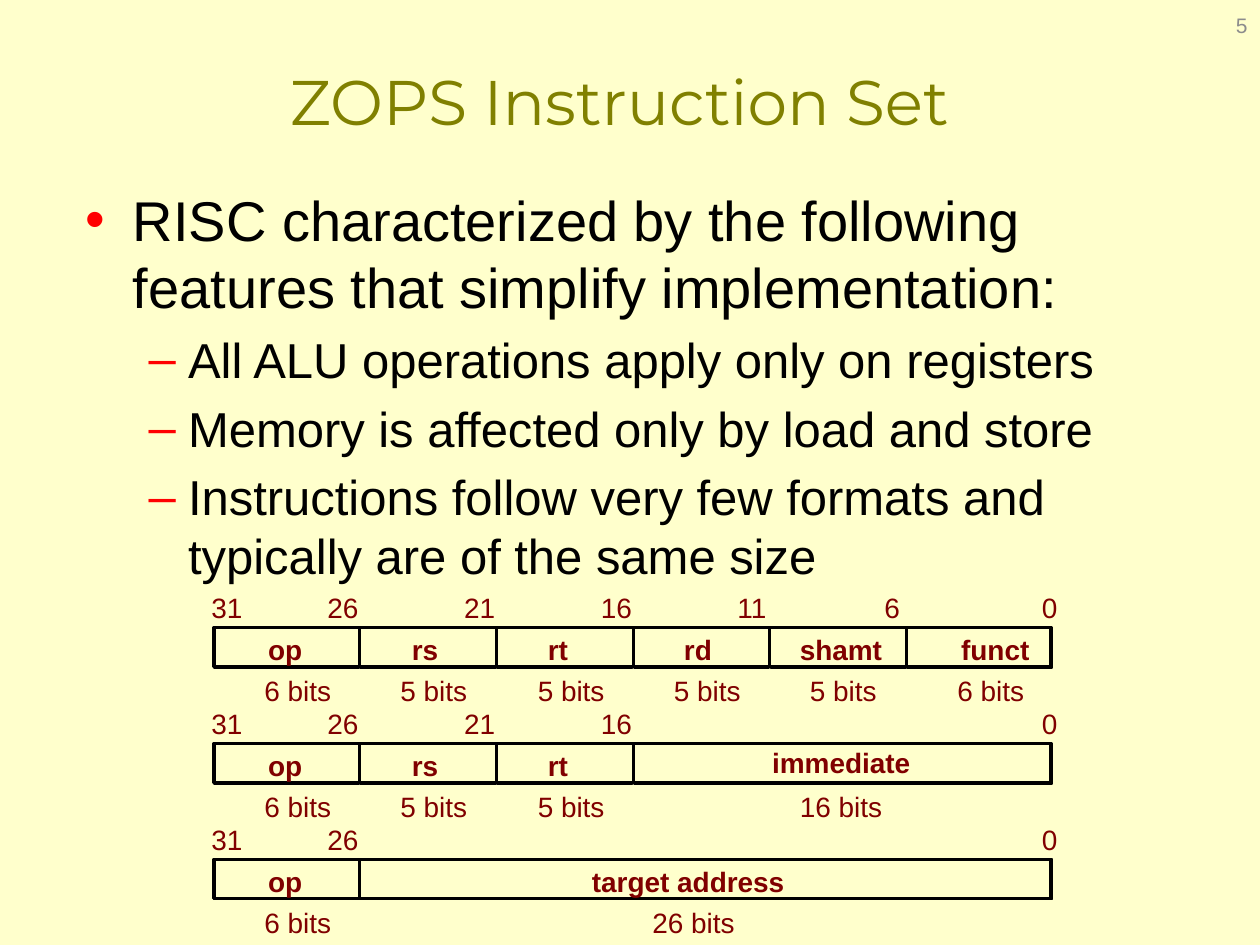
from typing import NamedTuple

from lxml.etree import SubElement
from pptx import Presentation
from pptx.dml.color import RGBColor
from pptx.enum.shapes import MSO_SHAPE
from pptx.enum.text import MSO_ANCHOR, MSO_AUTO_SIZE, PP_ALIGN
from pptx.oxml.ns import qn
from pptx.shapes.group import GroupShape
from pptx.slide import Slide
from pptx.text.text import TextFrame
from pptx.util import Inches, Pt

CREAM = RGBColor(0xFF, 0xFF, 0xCC)
OLIVE = RGBColor(0x80, 0x80, 0x00)
MAROON = RGBColor(0x80, 0x00, 0x00)
BLACK = RGBColor(0x00, 0x00, 0x00)
RED = RGBColor(0xFF, 0x00, 0x00)
GREY = RGBColor(0x8C, 0x8C, 0x8C)

STEP = 1.085
LEFT = 1.7
RIGHT = 8.35
HEIGHT = 0.32
GAP = 0.01


class Edge(NamedTuple):
    x: float
    mark: float


class Field(NamedTuple):
    name: str
    size: str
    high: int
    low: int
    name_x: float
    size_x: float
    wide: float
    lift: float = 0


EDGES = {
    31: Edge(LEFT, 1.58),
    **{bit: Edge(2.86 + n * STEP, 2.5 + n * STEP)
       for n, bit in enumerate((26, 21, 16, 11))},
    6: Edge(2.86 + 4 * STEP, 6.92),
    0: Edge(RIGHT + GAP, 8.17),
}

OP = Field("op", "6 bits", 31, 26, 2.03, 2.0, 0.48)
RS = Field("rs", "5 bits", 26, 21, 3.17, 3.08, 0.42)
RT = Field("rt", "5 bits", 21, 16, 4.25, 4.17, 0.37)
RD = Field("rd", "5 bits", 16, 11, 5.33, 5.25, 0.43)
SHAMT = Field("shamt", "5 bits", 11, 6, 6.25, 6.33, 0.86)
FUNCT = Field("funct", "6 bits", 6, 0, 7.53, 7.5, 0.75)
VALUE = Field("immediate", "16 bits", 16, 0, 6.03, 6.25, 1.31, 0.02)
TARGET = Field("target address", "26 bits", 26, 0, 4.6, 5.08, 1.74)

FORMATS = [
    [OP, RS, RT, RD, SHAMT, FUNCT],
    [OP, RS, RT, VALUE],
    [OP, TARGET],
]

POINTS = [
    "All ALU operations apply only on registers",
    "Memory is affected only by load and store",
    "Instructions follow very few formats and typically are of the same size",
]


def write(frame: TextFrame, text: str, *, size: float = 16,
          color: RGBColor = MAROON, font: str = "Arial", bold: bool = False,
          align: PP_ALIGN | None = None, level: int = 0,
          bullet: RGBColor | None = None, more: bool = False) -> None:
    para = frame.add_paragraph() if more else frame.paragraphs[0]
    para.level = level
    if align is not None:
        para.alignment = align
    if bullet is not None:
        tint = SubElement(para._p.get_or_add_pPr(), qn("a:buClr"))
        SubElement(tint, qn("a:srgbClr")).set("val", str(bullet))
    run = para.add_run()
    run.text = text
    run.font.size = Pt(size)
    run.font.name = font
    run.font.bold = bold
    run.font.color.rgb = color


def label(group: GroupShape, text: str, x: float, y: float, wide: float,
          bold: bool = False) -> None:
    box = group.shapes.add_textbox(
        Inches(x), Inches(y), Inches(wide), Inches(0.36))
    box.text_frame.word_wrap = False
    box.text_frame.auto_size = MSO_AUTO_SIZE.SHAPE_TO_FIT_TEXT
    write(box.text_frame, text, bold=bold)


def outline(group: GroupShape, x: float, y: float, wide: float, high: float,
            line: float) -> None:
    rect = group.shapes.add_shape(
        MSO_SHAPE.RECTANGLE, Inches(x), Inches(y), Inches(wide), Inches(high))
    rect.shadow.inherit = False
    rect.fill.background()
    rect.line.color.rgb = BLACK
    rect.line.width = Pt(line)


def draw_format(slide: Slide, fields: list[Field], top: float) -> None:
    group = slide.shapes.add_group_shape()
    outline(group, LEFT, top, RIGHT - LEFT - GAP, HEIGHT - GAP, 2)
    for bit in [31] + [field.low for field in fields]:
        wide = 0.46 if bit > 9 else 0.33
        label(group, str(bit), EDGES[bit].mark, top - 0.34, wide)
    for field in fields:
        start = EDGES[field.high].x
        wide = EDGES[field.low].x - start - GAP
        outline(group, start, top, wide, HEIGHT, 1)
        label(group, field.name, field.name_x, top - 0.01 - field.lift,
              field.wide, bold=True)
        label(group, field.size, field.size_x, top + HEIGHT,
              0.74 if len(field.size) == 6 else 0.86)


def main() -> None:
    deck = Presentation()
    deck.slide_width, deck.slide_height = Inches(10), Inches(7.5)
    slide = deck.slides.add_slide(deck.slide_layouts[1])
    slide.background.fill.solid()
    slide.background.fill.fore_color.rgb = CREAM

    for row, fields in enumerate(FORMATS):
        draw_format(slide, fields, 4.98 + row * 0.92)

    title, body = slide.placeholders
    for holder, top, high in ((title, 0.17, 1.25), (body, 1.42, 5.75)):
        holder.left, holder.top = Inches(0.58), Inches(top)
        holder.width, holder.height = Inches(8.67), Inches(high)
        holder.text_frame.auto_size = MSO_AUTO_SIZE.NONE
    title.text_frame.vertical_anchor = MSO_ANCHOR.MIDDLE
    write(title.text_frame, "ZOPS Instruction Set", size=36, color=OLIVE,
          font="Montserrat", align=PP_ALIGN.CENTER)
    write(body.text_frame,
          "RISC characterized by the following features "
          "that simplify implementation:",
          size=32, color=BLACK, bullet=RED)
    for point in POINTS:
        write(body.text_frame, point, size=28, color=BLACK, level=1,
              bullet=RED, more=True)

    page = slide.shapes.add_textbox(
        Inches(7.67), Inches(0), Inches(2.33), Inches(0.4))
    page.text_frame.word_wrap = True
    page.text_frame.vertical_anchor = MSO_ANCHOR.MIDDLE
    write(page.text_frame, "5", size=12, color=GREY, align=PP_ALIGN.RIGHT)
    deck.save("out.pptx")


if __name__ == "__main__":
    main()
